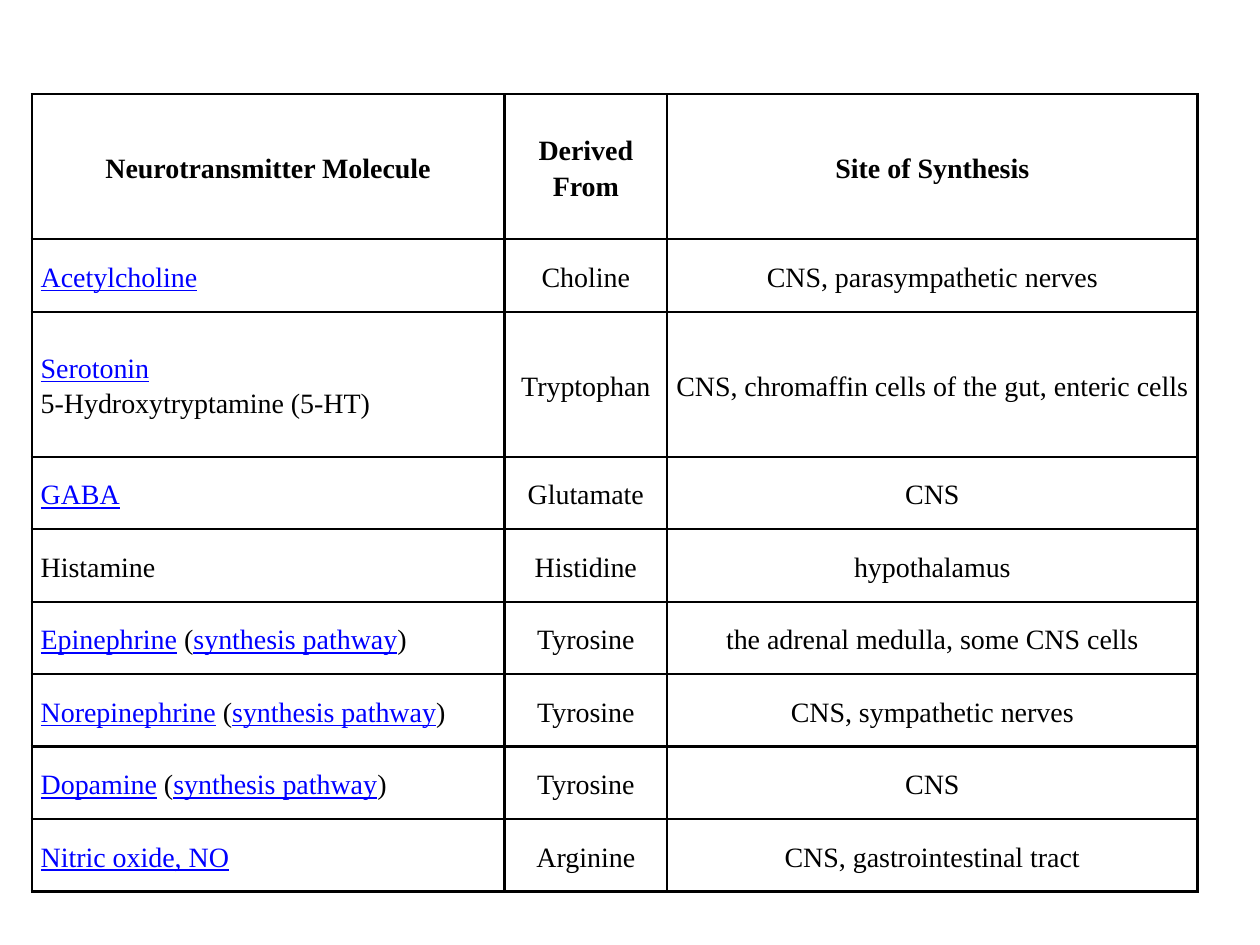
import dataclasses

import lxml.etree
import pptx
import pptx.dml.color
import pptx.enum.text
import pptx.oxml.ns
import pptx.util

Cm = pptx.util.Cm
ALIGN = pptx.enum.text.PP_ALIGN


@dataclasses.dataclass(frozen=True)
class Theme:
    font: str = "Times New Roman"
    size: int = 16
    line_spacing: float = 1.15
    ink: str = "000000"
    link: str = "0000FF"
    border: float = 1.5


@dataclasses.dataclass(frozen=True)
class Box:
    left: float
    top: float
    width: float
    height: float


THEME = Theme()
HEADINGS = ["Neurotransmitter Molecule", "Derived From", "Site of Synthesis"]
COLUMN_WIDTHS = [9.53, 3.28, 10.69]

# Molecule (underlined name, plain text, ...), precursor, site
MOLECULES = [
    (["Acetylcholine"], "Choline", "CNS, parasympathetic nerves"),
    (["Serotonin", "\n5-Hydroxytryptamine (5-HT)"], "Tryptophan",
     "CNS, chromaffin cells of the gut, enteric cells"),
    (["GABA"], "Glutamate", "CNS"),
    (["", "Histamine"], "Histidine", "hypothalamus"),
    (["Epinephrine", " (", "synthesis pathway", ")"], "Tyrosine",
     "the adrenal medulla, some CNS cells"),
    (["Norepinephrine", " (", "synthesis pathway", ")"], "Tyrosine",
     "CNS, sympathetic nerves"),
    (["Dopamine", " (", "synthesis pathway", ")"], "Tyrosine", "CNS"),
    (["Nitric oxide, NO"], "Arginine", "CNS, gastrointestinal tract"),
]
# Row heights in units of one single-line row
ROW_UNITS = [2, 1, 2, 1, 1, 1, 1, 1, 1]


def add_text(para, text, color=THEME.ink, bold=False, underline=False):
    """Add formatted text to a paragraph; a newline becomes a line break."""
    for number, line in enumerate(text.split("\n")):
        if number:
            para.add_line_break()
        if not line:
            continue
        span = para.add_run()
        span.text = line
        span.font.name = THEME.font
        span.font.size = pptx.util.Pt(THEME.size)
        span.font.bold = bold
        span.font.underline = underline
        span.font.color.rgb = pptx.dml.color.RGBColor.from_string(color)


def format_cell(cell, align):
    """Set borders, margins and alignment; return the cell's paragraph."""
    properties = cell._tc.get_or_add_tcPr()
    for side in ("a:lnL", "a:lnR", "a:lnT", "a:lnB"):
        line = lxml.etree.SubElement(properties, pptx.oxml.ns.qn(side),
                                     w=str(pptx.util.Pt(THEME.border)))
        fill = lxml.etree.SubElement(line, pptx.oxml.ns.qn("a:solidFill"))
        lxml.etree.SubElement(fill, pptx.oxml.ns.qn("a:srgbClr"), val=THEME.ink)
    cell.fill.background()
    cell.margin_left = cell.margin_right = Cm(0.18)
    cell.margin_top = cell.margin_bottom = 0
    cell.vertical_anchor = pptx.enum.text.MSO_ANCHOR.MIDDLE
    para = cell.text_frame.paragraphs[0]
    para.alignment = align
    para.line_spacing = THEME.line_spacing
    return para


def add_molecule_table(page, box):
    table = page.shapes.add_table(
        len(ROW_UNITS), len(HEADINGS),
        Cm(box.left), Cm(box.top), Cm(box.width), Cm(box.height)).table
    table.first_row = table.horz_banding = False
    for column, width in zip(table.columns, COLUMN_WIDTHS):
        column.width = Cm(width)
    for row, units in zip(table.rows, ROW_UNITS):
        row.height = Cm(box.height * units / sum(ROW_UNITS))

    # Heading row
    for column, heading in enumerate(HEADINGS):
        add_text(format_cell(table.cell(0, column), ALIGN.CENTER), heading, bold=True)

    # One row per molecule
    for row, (names, *details) in enumerate(MOLECULES, start=1):
        para = format_cell(table.cell(row, 0), ALIGN.LEFT)
        for number, name in enumerate(names):
            linked = number % 2 == 0
            add_text(para, name, color=THEME.link if linked else THEME.ink,
                     underline=linked)
        for column, detail in enumerate(details, start=1):
            add_text(format_cell(table.cell(row, column), ALIGN.CENTER), detail)


def main():
    deck = pptx.Presentation()
    deck.slide_width, deck.slide_height = Cm(25.4), Cm(19.05)
    page = deck.slides.add_slide(deck.slide_layouts[6])
    add_molecule_table(page, Box(0.64, 1.9, sum(COLUMN_WIDTHS), 16.08))
    deck.save("out.pptx")


if __name__ == "__main__":
    main()
